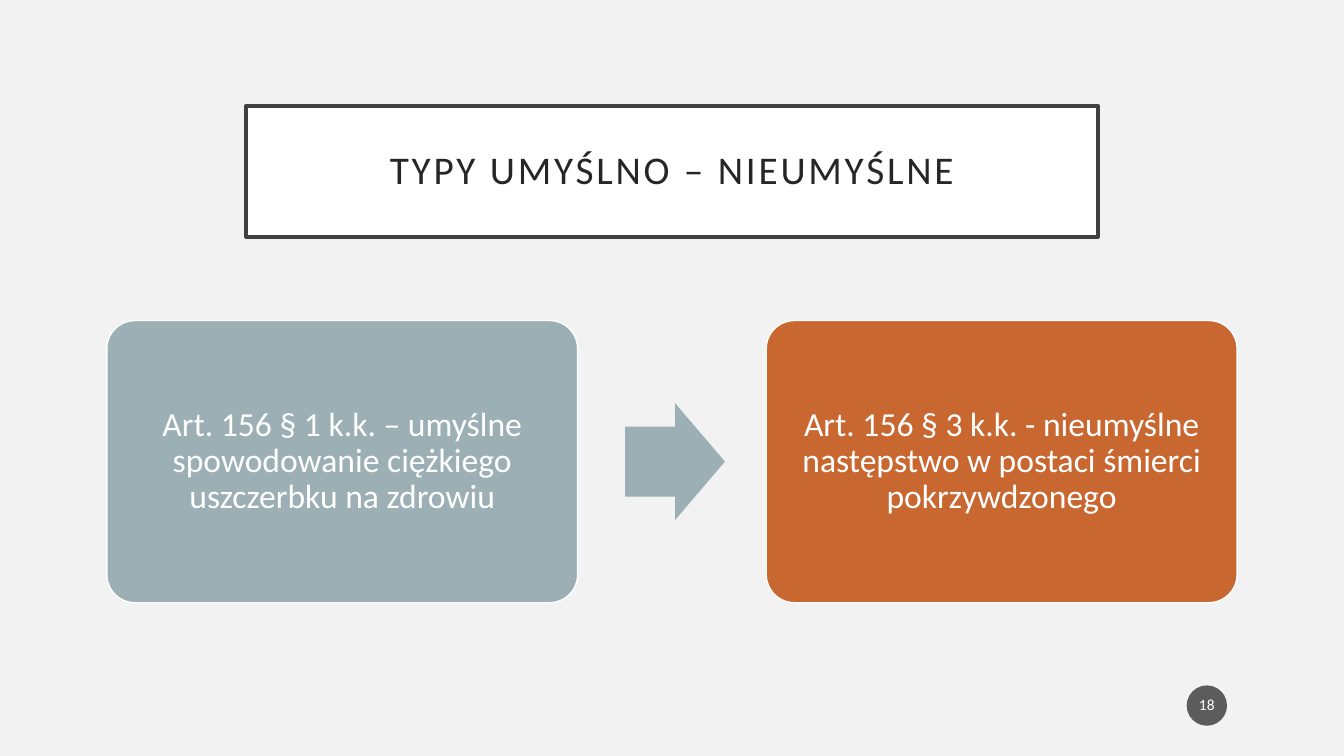
"""Build a slide that pairs the intentional and unintentional offence types."""
from lxml import etree
from pptx import Presentation, util as u
from pptx.dml import color
from pptx.enum import shapes, text
from pptx.oxml import ns

TITLE = "TYPY UMYŚLNO – NIEUMYŚLNE"
PAGE_NUMBER = "18"
OFFENCES = [
    ("Art. 156 § 1 k.k. – umyślne spowodowanie ciężkiego uszczerbku na zdrowiu", "9BAFB5"),
    ("Art. 156 § 3 k.k. - nieumyślne następstwo w postaci śmierci pokrzywdzonego", "C96731"),
]
FONT = "Calibri"
SLIDE_WIDTH, SLIDE_HEIGHT = 13.33, 7.5
CARD_LEFT, CARD_TOP, CARD_WIDTH, CARD_HEIGHT, CARD_STEP = 1.06, 3.18, 4.67, 2.8, 6.54
ARROW_LEFT, ARROW_WIDTH, ARROW_HEIGHT = 6.2, 0.99, 1.16


def paint(fill, value):
    fill.solid()
    fill.fore_color.rgb = color.RGBColor.from_string(value)


def add_box(page, kind, place, fill, line=None, adjustments=()):
    box = page.shapes.add_shape(kind, *map(u.Inches, place))
    box.shadow.inherit = False
    paint(box.fill, fill)
    if line:
        paint(box.line.fill, line[0])
        box.line.width = u.Pt(line[1])
    else:
        box.line.fill.background()
    for index, value in enumerate(adjustments):
        box.adjustments[index] = value
    return box


def write(box, words, size, ink, insets, spacing=None):
    frame = box.text_frame
    frame.word_wrap = True
    frame.vertical_anchor = text.MSO_ANCHOR.MIDDLE
    frame.margin_left = frame.margin_right = u.Inches(insets[0])
    frame.margin_top = frame.margin_bottom = u.Inches(insets[1])
    para = frame.paragraphs[0]
    para.alignment = text.PP_ALIGN.CENTER
    para.line_spacing = 0.9
    span = para.add_run()
    span.text = words
    span.font.name = FONT
    span.font.size = u.Pt(size)
    paint(span.font.fill, ink)
    if spacing:
        span.font._element.set("spc", str(spacing * 100))


def main():
    deck = Presentation()
    deck.slide_width, deck.slide_height = u.Inches(SLIDE_WIDTH), u.Inches(SLIDE_HEIGHT)
    page = deck.slides.add_slide(deck.slide_layouts[6])
    paint(page.background.fill, "F2F2F2")
    kinds = shapes.MSO_SHAPE

    title = add_box(page, kinds.RECTANGLE, (2.44, 1.05, 8.45, 1.3), "FFFFFF", ("404040", 2.5))
    write(title, TITLE, 28, "262626", (0.2, 0.2), spacing=2)

    badge = add_box(page, kinds.OVAL, (11.77, 6.8, 0.4, 0.4), "1D1D1D")
    tint = badge.fill._xPr.find(".//" + ns.qn("a:srgbClr"))
    etree.SubElement(tint, ns.qn("a:alpha"), val="70000")
    write(badge, PAGE_NUMBER, 11, "FFFFFF", (0.02, 0.05))

    for index, (words, fill) in enumerate(OFFENCES):
        place = (CARD_LEFT + index * CARD_STEP, CARD_TOP, CARD_WIDTH, CARD_HEIGHT)
        card = add_box(page, kinds.ROUNDED_RECTANGLE, place, fill, ("FFFFFF", 1), [0.1])
        write(card, words, 24, "FFFFFF", (0.1, 0.1))

    arrow_top = CARD_TOP + (CARD_HEIGHT - ARROW_HEIGHT) / 2
    add_box(page, kinds.RIGHT_ARROW, (ARROW_LEFT, arrow_top, ARROW_WIDTH, ARROW_HEIGHT),
            OFFENCES[0][1], adjustments=[0.6, 0.5])
    deck.save("out.pptx")


if __name__ == "__main__":
    main()
